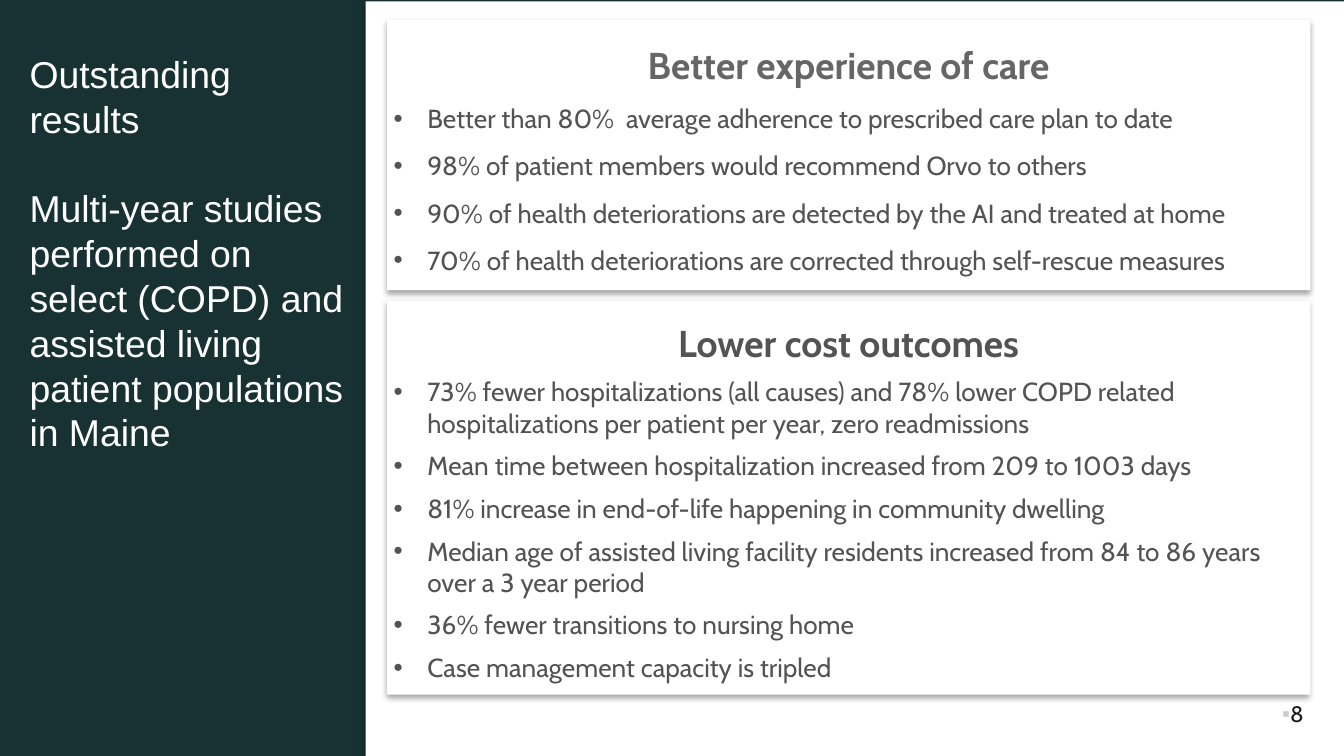
from lxml import etree
from pptx import Presentation
from pptx.dml.color import RGBColor
from pptx.enum.shapes import MSO_SHAPE
from pptx.enum.text import MSO_ANCHOR, PP_ALIGN
from pptx.oxml.ns import qn
from pptx.util import Inches, Pt

RECTANGLE = MSO_SHAPE.RECTANGLE
TOP, MIDDLE = MSO_ANCHOR.TOP, MSO_ANCHOR.MIDDLE
LEFT, CENTER, RIGHT = PP_ALIGN.LEFT, PP_ALIGN.CENTER, PP_ALIGN.RIGHT

DARK_TEAL = RGBColor(0x18, 0x32, 0x34)
WHITE = RGBColor(0xFF, 0xFF, 0xFF)
BLACK = RGBColor(0x00, 0x00, 0x00)
INK = RGBColor(0x1C, 0x1A, 0x18)
GRAY = RGBColor(0x66, 0x66, 0x66)
DARK_GRAY = RGBColor(0x53, 0x53, 0x53)
PALE_GRAY = RGBColor(0xCC, 0xCC, 0xCC)

SLIDE_WIDTH = 10
SLIDE_HEIGHT = SLIDE_WIDTH * 9 / 16

SIDEBAR_TEXT = [
    "Outstanding results",
    "Multi-year studies performed on select (COPD) and assisted living "
    "patient populations in Maine",
]
CARE_RESULTS = [
    "Better than 80%  average adherence to prescribed care plan to date",
    "98% of patient members would recommend Orvo to others",
    "90% of health deteriorations are detected by the AI and treated at home",
    "70% of health deteriorations are corrected through self-rescue measures",
]
COST_RESULTS = [
    "73% fewer hospitalizations (all causes) and 78% lower COPD related "
    "hospitalizations per patient per year, zero readmissions",
    "Mean time between hospitalization increased from 209 to 1003 days",
    "81% increase in end-of-life happening in community dwelling",
    "Median age of assisted living facility residents increased from 84 to 86 "
    "years over a 3 year period",
    "36% fewer transitions to nursing home",
    "Case management capacity is tripled",
]


class SlideBuilder:
    body_font = "Cabin"
    sidebar_font = "Arial"
    title_size = Pt(20)
    bullet_size = Pt(14)
    paragraph_gap = Pt(6)
    bullet_indent = Inches(0.25)

    def __init__(self, page):
        self.page = page

    def panel(self, left, top, width, height):
        """White rectangle with a soft shadow below it."""
        shape = self.page.shapes.add_shape(
            RECTANGLE, Inches(left), Inches(top), Inches(width), Inches(height))
        shape.fill.solid()
        shape.fill.fore_color.rgb = WHITE
        shape.line.fill.background()
        shape.shadow.inherit = False
        effects = shape._element.spPr.find(qn("a:effectLst"))
        shadow = etree.SubElement(
            effects, qn("a:outerShdw"), blurRad=str(Pt(3)), dist=str(Pt(1.8)),
            dir="5400000", algn="t", rotWithShape="0")
        color = etree.SubElement(shadow, qn("a:srgbClr"), val=str(BLACK))
        etree.SubElement(color, qn("a:alpha"), val="35000")
        return shape

    def text_box(self, left, top, width, height, inset, anchor):
        box = self.page.shapes.add_textbox(
            Inches(left), Inches(top), Inches(width), Inches(height))
        return self.frame(box, inset, anchor)

    def frame(self, shape, inset, anchor):
        """Prepare the text frame of a shape and return it."""
        frame = shape.text_frame
        margin = Inches(inset)
        settings = dict(
            word_wrap=True, vertical_anchor=anchor, margin_left=margin,
            margin_right=margin, margin_top=margin, margin_bottom=margin)
        for name, value in settings.items():
            setattr(frame, name, value)
        return frame

    def paragraph(self, frame, text, font, bullet=None, **layout):
        first = frame.paragraphs[0]
        is_first = not first.runs
        para = first if is_first else frame.add_paragraph()
        if bullet:
            self.bullet(para, **bullet)
        if is_first:
            layout["space_before"] = Pt(0)
        for name, value in layout.items():
            setattr(para, name, value)
        span = para.add_run()
        span.text = text
        format_values = dict(font)
        span.font.color.rgb = format_values.pop("color")
        for name, value in format_values.items():
            setattr(span.font, name, value)

    def bullet(self, para, symbol, indent=0, color=None):
        properties = para._p.get_or_add_pPr()
        properties.set("marL", str(indent))
        properties.set("indent", str(-indent))
        if color:
            bullet_color = etree.SubElement(properties, qn("a:buClr"))
            etree.SubElement(bullet_color, qn("a:srgbClr"), val=str(color))
        etree.SubElement(properties, qn("a:buFont"), typeface="Arial")
        etree.SubElement(properties, qn("a:buChar"), char=symbol)

    def sidebar(self, texts):
        frame = self.text_box(0.19, 0.35, 2.44, 4.44, 0.03, TOP)
        font = dict(name=self.sidebar_font, size=self.title_size, color=WHITE)
        for text in texts:
            self.paragraph(frame, text, font, alignment=LEFT,
                           line_spacing=Pt(24), space_before=Pt(24))

    def card(self, top, height, title, title_color, results, spacing):
        """Panel with a centred title and bulleted results."""
        frame = self.frame(self.panel(2.88, top, 6.87, height), 0.05, MIDDLE)
        title_font = dict(name=self.body_font, size=self.title_size,
                          bold=True, color=title_color)
        result_font = dict(name=self.body_font, size=self.bullet_size,
                           bold=False, color=DARK_GRAY)
        self.paragraph(frame, title, title_font, alignment=CENTER, line_spacing=1.15)
        for result in results:
            self.paragraph(
                frame, result, result_font,
                bullet=dict(symbol="•", indent=self.bullet_indent),
                alignment=LEFT, line_spacing=spacing,
                space_before=self.paragraph_gap)

    def page_number(self, number):
        frame = self.text_box(9.33, 5.16, 0.42, 0.3, 0.05, MIDDLE)
        font = dict(name=self.body_font, size=Pt(12), color=INK)
        self.paragraph(frame, number, font, alignment=RIGHT,
                       bullet=dict(symbol="▪", color=PALE_GRAY))


def main():
    deck = Presentation()
    deck.slide_width = Inches(SLIDE_WIDTH)
    deck.slide_height = Inches(SLIDE_HEIGHT)
    page = deck.slides.add_slide(deck.slide_layouts[6])
    page.background.fill.solid()
    page.background.fill.fore_color.rgb = DARK_TEAL

    builder = SlideBuilder(page)
    builder.panel(2.72, 0.01, 7.28, 5.63)
    builder.sidebar(SIDEBAR_TEXT)
    builder.page_number("8")
    builder.card(0.15, 2.01, "Better experience of care", GRAY, CARE_RESULTS, 1.15)
    builder.card(2.24, 2.93, "Lower cost outcomes", DARK_GRAY, COST_RESULTS, 1.0)
    deck.save("out.pptx")


if __name__ == "__main__":
    main()
